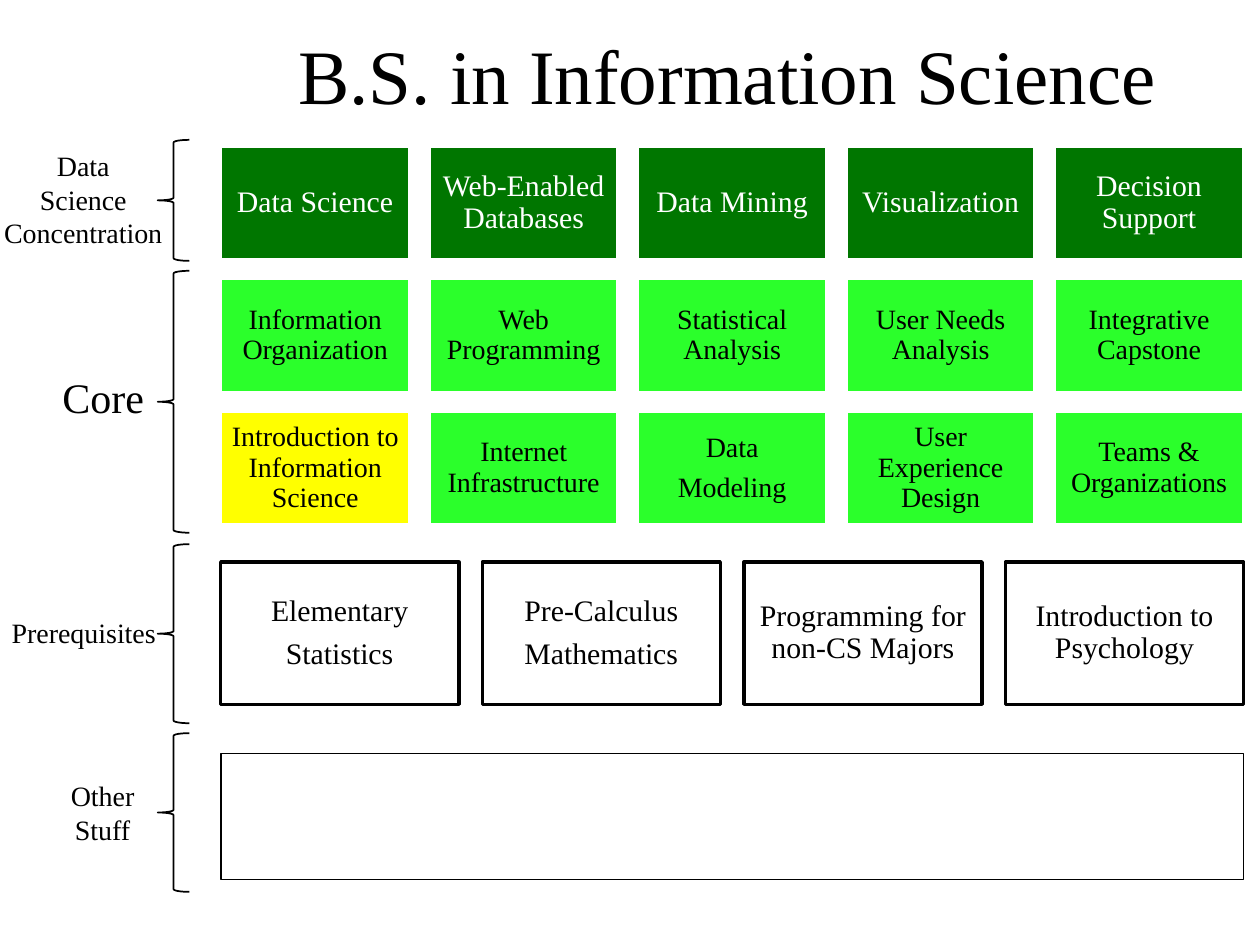
import pptx
import pptx.util
import pptx.dml.color
import pptx.enum.shapes
import pptx.enum.text

Cm = pptx.util.Cm
Pt = pptx.util.Pt
SHAPES = pptx.enum.shapes.MSO_SHAPE
ALIGN = pptx.enum.text.PP_ALIGN
ANCHOR = pptx.enum.text.MSO_ANCHOR

FONT = "Times New Roman"
BLACK, WHITE = "000000", "FFFFFF"
DARK_GREEN, LIGHT_GREEN, YELLOW = "007600", "2BFF2B", "FFFF00"
GRID_LEFT, GRID_WIDTH = 4.45, 20.62

COURSE_ROWS = [
    (2.95, DARK_GREEN, WHITE, 17,
     ["Data Science", "Web-Enabled Databases", "Data Mining", "Visualization",
      "Decision Support"]),
    (5.62, LIGHT_GREEN, BLACK, 16,
     ["Information Organization", "Web Programming", "Statistical Analysis",
      "User Needs Analysis", "Integrative Capstone"]),
    (8.29, LIGHT_GREEN, BLACK, 16,
     ["Introduction to Information Science", "Internet Infrastructure",
      "Data\nModeling", "User Experience Design", "Teams & Organizations"]),
]
PREREQUISITES = ["Elementary\nStatistics", "Pre-Calculus\nMathematics",
                 "Programming for non-CS Majors", "Introduction to Psychology"]
BRACES = [(2.82, 2.44), (5.46, 5.28), (10.97, 3.61), (14.78, 3.2)]
LABELS = [
    ("Data\nScience\nConcentration", -0.2, 2.87, 3.76, 2.31, 16),
    ("Core", 0.99, 7.37, 2.18, 1.27, 24),
    ("Prerequisites", -0.05, 12.29, 3.48, 0.94, 16),
    ("Other\nStuff", 1.17, 15.57, 1.8, 1.63, 16),
]


def rgb(value):
    """Turn a hex string into a colour."""
    return pptx.dml.color.RGBColor.from_string(value)


def write_text(shape, text, size, color):
    """Fill a shape with centred paragraphs in the slide font."""
    shape.text_frame.text = text
    for paragraph in shape.text_frame.paragraphs:
        paragraph.alignment = ALIGN.CENTER
        paragraph.font.name = FONT
        paragraph.font.size = Pt(size)
        paragraph.font.color.rgb = rgb(color)


def add_outlined(slide, preset, left, top, width, height, fill, line, weight):
    """Add a flat preset shape with a fill and an outline."""
    shape = slide.shapes.add_shape(preset, Cm(left), Cm(top), Cm(width), Cm(height))
    shape.shadow.inherit = False
    shape.fill.solid()
    shape.fill.fore_color.rgb = rgb(fill)
    shape.line.color.rgb = rgb(line)
    shape.line.width = Pt(weight)
    return shape


def add_course(slide, text, bounds, fill, line, size, color):
    """Add one course box."""
    shape = add_outlined(slide, SHAPES.RECTANGLE, *bounds, fill, line, 2)
    frame = shape.text_frame
    frame.word_wrap = True
    frame.vertical_anchor = ANCHOR.MIDDLE
    frame.margin_left = frame.margin_right = Cm(0.18)
    frame.margin_top = frame.margin_bottom = Cm(0.18)
    write_text(shape, text, size, color)
    for paragraph in frame.paragraphs:
        paragraph.line_spacing = 0.9
        paragraph.space_after = Pt(size * 0.35)


def add_course_row(slide, names, top, width, height, fill, line, size, color):
    """Spread course boxes evenly across the grid."""
    pitch = (GRID_WIDTH - width) / (len(names) - 1)
    for column, name in enumerate(names):
        bounds = (GRID_LEFT + column * pitch, top, width, height)
        box_fill = YELLOW if name.startswith("Introduction to Info") else fill
        add_course(slide, name, bounds, box_fill, line, size, color)


def add_label(slide, text, left, top, width, height, size):
    """Add the name of a group beside its brace."""
    label = slide.shapes.add_textbox(Cm(left), Cm(top), Cm(width), Cm(height))
    label.text_frame.word_wrap = False
    label.text_frame.auto_size = pptx.enum.text.MSO_AUTO_SIZE.SHAPE_TO_FIT_TEXT
    write_text(label, text, size, BLACK)


def set_title(slide, text):
    """Place and format the title placeholder."""
    title = slide.shapes.title
    title.left, title.top = Cm(4.24), Cm(0.41)
    title.width, title.height = Cm(20.85), Cm(2.16)
    title.text_frame.vertical_anchor = ANCHOR.MIDDLE
    write_text(title, text, 44, BLACK)


def main():
    """Build the curriculum slide."""
    presentation = pptx.Presentation()
    presentation.slide_width, presentation.slide_height = Cm(25.4), Cm(19.05)
    slide = presentation.slides.add_slide(presentation.slide_layouts[5])
    set_title(slide, "B.S. in Information Science")
    for top, fill, color, size, names in COURSE_ROWS:
        add_course_row(slide, names, top, 3.81, 2.29, fill, WHITE, size, color)
    add_course_row(slide, PREREQUISITES, 11.33, 4.8, 2.87, WHITE, BLACK, 17, BLACK)
    add_outlined(slide, SHAPES.RECTANGLE, GRID_LEFT, 15.19, GRID_WIDTH, 2.54,
                 WHITE, BLACK, 1)
    for top, height in BRACES:
        add_outlined(slide, SHAPES.LEFT_BRACE, 3.18, top, 0.64, height,
                     WHITE, BLACK, 1)
    for label in LABELS:
        add_label(slide, *label)
    presentation.save("out.pptx")


if __name__ == "__main__":
    main()
